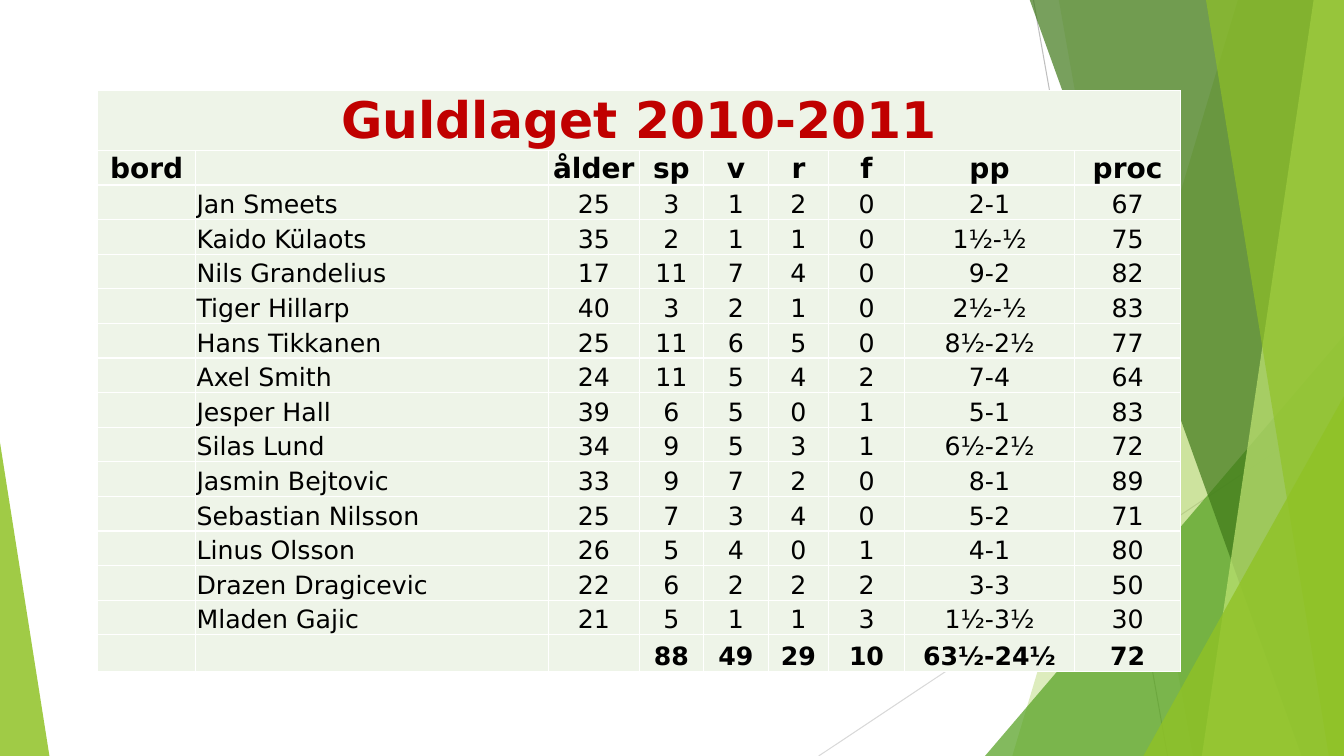
from lxml import etree
from pptx import Presentation
from pptx.dml.color import RGBColor
from pptx.enum.shapes import MSO_CONNECTOR, MSO_SHAPE
from pptx.enum.text import MSO_ANCHOR, PP_ALIGN
from pptx.oxml import parse_xml
from pptx.oxml.ns import nsdecls, qn
from pptx.util import Inches, Pt

W, H = 13.33, 7.5
FONT = "DejaVu Sans"
TITLE = "Guldlaget 2010-2011"
HEADER = ("bord", "", "ålder", "sp", "v", "r", "f", "pp", "proc")
PLAYERS = [
    ("Jan Smeets", 25, 3, 1, 2, 0, "2-1", 67),
    ("Kaido Külaots", 35, 2, 1, 1, 0, "1½-½", 75),
    ("Nils Grandelius", 17, 11, 7, 4, 0, "9-2", 82),
    ("Tiger Hillarp", 40, 3, 2, 1, 0, "2½-½", 83),
    ("Hans Tikkanen", 25, 11, 6, 5, 0, "8½-2½", 77),
    ("Axel Smith", 24, 11, 5, 4, 2, "7-4", 64),
    ("Jesper Hall", 39, 6, 5, 0, 1, "5-1", 83),
    ("Silas Lund", 34, 9, 5, 3, 1, "6½-2½", 72),
    ("Jasmin Bejtovic", 33, 9, 7, 2, 0, "8-1", 89),
    ("Sebastian Nilsson", 25, 7, 3, 4, 0, "5-2", 71),
    ("Linus Olsson", 26, 5, 4, 0, 1, "4-1", 80),
    ("Drazen Dragicevic", 22, 6, 2, 2, 2, "3-3", 50),
    ("Mladen Gajic", 21, 5, 1, 1, 3, "1½-3½", 30),
]
TOTALS = ("", "", "", 88, 49, 29, 10, "63½-24½", 72)

LEFT, TOP, HEIGHT = 0.97, 0.9, 5.75
COLUMNS = (0.97, 3.5, 0.9, 0.64, 0.64, 0.6, 0.75, 1.69, 1.05)
TITLE_H, TOTAL_H = 0.58, 0.36
CELL_FILL, BORDER = "EEF4E8", "FFFFFF"

# Thin lines: start, end, colour
LINES = [((10.25, 0), (11.58, H), "BFBFBF"), ((W, 4.03), (8.12, H), "D9D9D9")]
# Bands reach the right edge: top x, bottom x, colour, opacity %
# Triangles stand on the bottom edge: left, top, width, apex, colour, opacity %
DECOR = [
    ("band", 12.28, 10.04, "90C226", 30),
    ("band", 10.5, 11.83, "90C226", 20),
    ("triangle", 9.77, 3.33, 3.56, 1, "54A021", 72),
    ("band", 10.21, 12.91, "3F7819", 70),
    ("band", 13.03, 11.92, "C0E474", 70),
    ("band", 11.96, 13.18, "90C226", 65),
    ("triangle", 11.34, 3.93, 1.99, 1, "90C226", 80),
    ("triangle", 0, 4.39, 0.49, 0, "90C226", 85),
]


def rgb(color):
    return RGBColor.from_string(color)


def paint(sp, color, opacity):
    sp.shadow.inherit = False
    sp.line.fill.background()
    sp.fill.solid()
    sp.fill.fore_color.rgb = rgb(color)
    clr = sp.fill._xPr.find(qn("a:solidFill"))[0]
    etree.SubElement(clr, qn("a:alpha"), val=str(opacity * 1000))


def add_line(s, start, end, color):
    c = s.shapes.add_connector(MSO_CONNECTOR.STRAIGHT,
                               *(Inches(v) for v in start + end))
    c.line.color.rgb = rgb(color)
    c.line.width = Pt(0.75)
    etree.SubElement(c._element.spPr, qn("a:effectLst"))


def add_band(s, top_x, bottom_x, color, opacity):
    fb = s.shapes.build_freeform(Inches(top_x), Inches(-0.01))
    corners = [(W, -0.01), (W, H), (bottom_x, H)]
    fb.add_line_segments([(Inches(x), Inches(y)) for x, y in corners])
    paint(fb.convert_to_shape(), color, opacity)


def add_triangle(s, left, top, width, apex, color, opacity):
    sp = s.shapes.add_shape(MSO_SHAPE.ISOSCELES_TRIANGLE, Inches(left),
                            Inches(top), Inches(width), Inches(H - top))
    sp.adjustments[0] = apex
    paint(sp, color, opacity)


def format_cell(cell, text, size, bold, color, align):
    tcPr = cell._tc.get_or_add_tcPr()
    for side in "LRTB":
        tcPr.append(parse_xml(
            f'<a:ln{side} {nsdecls("a")} w="12700"><a:solidFill>'
            f'<a:srgbClr val="{BORDER}"/></a:solidFill></a:ln{side}>'))
    cell.fill.solid()
    cell.fill.fore_color.rgb = rgb(CELL_FILL)
    cell.margin_left = cell.margin_right = cell.margin_top = Inches(0.01)
    cell.margin_bottom = 0
    cell.vertical_anchor = MSO_ANCHOR.BOTTOM
    p = cell.text_frame.paragraphs[0]
    p.text = str(text)
    p.alignment = align
    for r in p.runs:
        r.font.name, r.font.size, r.font.bold = FONT, Pt(size), bold
        r.font.color.rgb = rgb(color)


def add_results(s):
    # Each row: values, size, bold, colour
    rows = [((TITLE,) + ("",) * 8, 36, True, "C00000"),
            (HEADER, 20, True, "000000")]
    rows += [(("",) + player, 18, False, "000000") for player in PLAYERS]
    rows.append((TOTALS, 18, True, "000000"))

    table = s.shapes.add_table(len(rows), len(COLUMNS), Inches(LEFT), Inches(TOP),
                               Inches(sum(COLUMNS)), Inches(HEIGHT)).table
    table.first_row = table.horz_banding = False
    for col, width in zip(table.columns, COLUMNS):
        col.width = Inches(width)
    row_h = (HEIGHT - TITLE_H - TOTAL_H) / (len(rows) - 2)
    heights = [TITLE_H] + [row_h] * (len(rows) - 2) + [TOTAL_H]
    for i, (values, size, bold, color) in enumerate(rows):
        table.rows[i].height = Inches(heights[i])
        for j, value in enumerate(values):
            align = PP_ALIGN.LEFT if j == 1 else PP_ALIGN.CENTER
            format_cell(table.cell(i, j), value, size, bold, color, align)
    table.cell(0, 0).merge(table.cell(0, len(COLUMNS) - 1))


def main():
    prs = Presentation()
    prs.slide_width, prs.slide_height = Inches(W), Inches(H)
    s = prs.slides.add_slide(prs.slide_layouts[6])

    # Decoration behind the table
    for line in LINES:
        add_line(s, *line)
    draw = {"band": add_band, "triangle": add_triangle}
    for kind, *args in DECOR:
        draw[kind](s, *args)

    # Team results
    add_results(s)
    prs.save("out.pptx")


if __name__ == "__main__":
    main()
